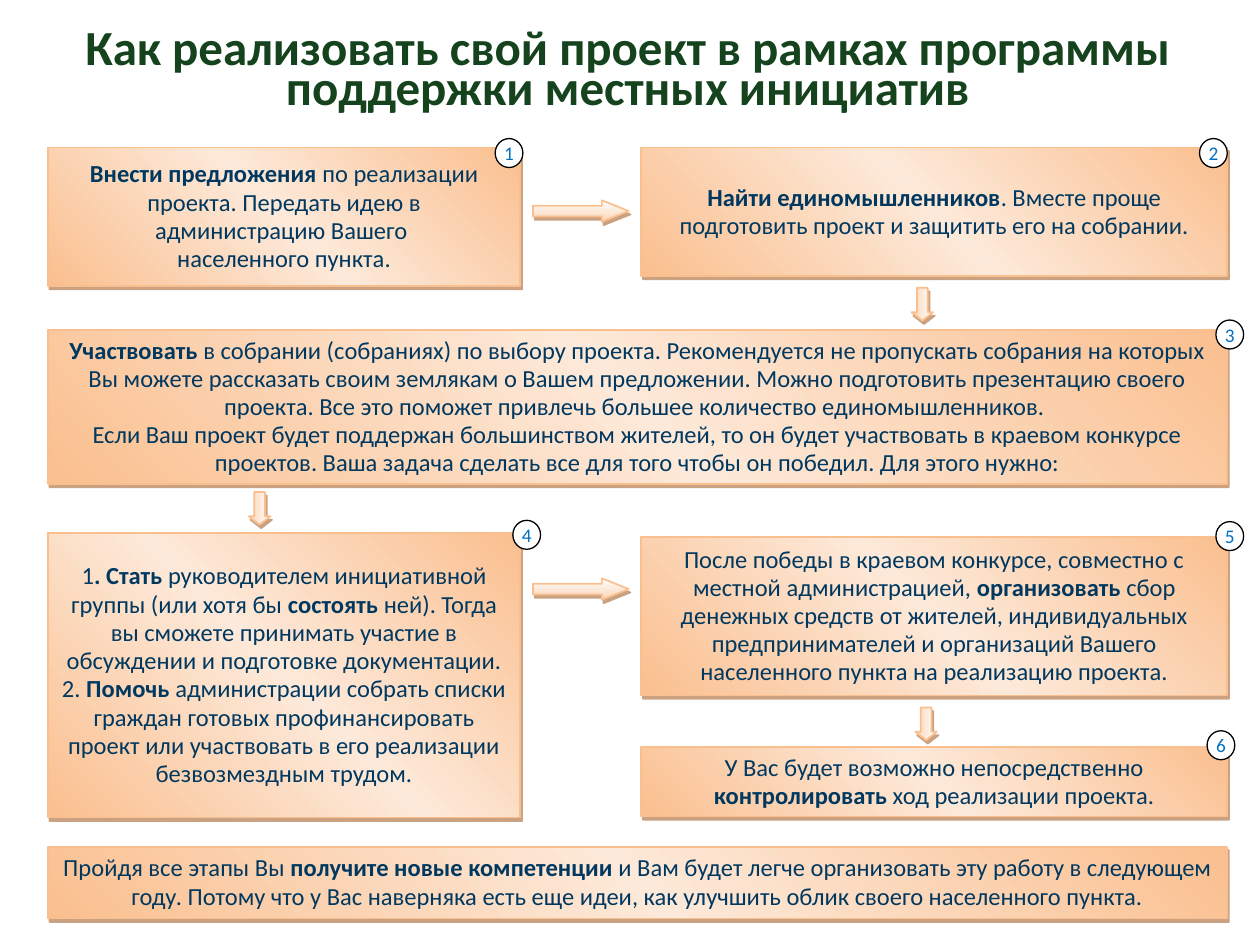
from pptx import Presentation
from pptx.dml.color import RGBColor
from pptx.enum.shapes import MSO_SHAPE
from pptx.enum.text import MSO_ANCHOR, PP_ALIGN
from pptx.oxml import parse_xml
from pptx.oxml.ns import nsdecls, qn
from pptx.util import Inches, Pt


def write(frame, lines, size, color, space=None):
    """Fill a frame with centred paragraphs; text between asterisks is bold."""
    frame.word_wrap = True
    for i, line in enumerate(lines):
        para = frame.paragraphs[0] if i == 0 else frame.add_paragraph()
        para.alignment = PP_ALIGN.CENTER
        if space:
            para.line_spacing = space
        for j, part in enumerate(line.split("*")):
            if part:
                run = para.add_run()
                run.text = part
                run.font.name = "Calibri"
                run.font.size = Pt(size)
                run.font.bold = j % 2 == 1
                run.font.color.rgb = RGBColor.from_string(color)


def add_block(kind, place, stops, angle):
    """Add a shape with a gradient, an orange line and a soft brown shadow."""
    shape = slide.shapes.add_shape(kind, *map(Inches, place))
    shape.fill.gradient()
    shape.line.color.rgb = RGBColor.from_string("FABF8F")
    shape.line.width = Pt(1)
    shape.shadow.inherit = False
    step = 100000 // (len(stops) - 1)
    marks = "".join(
        f'<a:gs pos="{i * step}"><a:srgbClr val="{color}"/></a:gs>'
        for i, color in enumerate(stops))
    props = shape._element.spPr
    props.replace(props.find(qn("a:gradFill")), parse_xml(
        f'<a:gradFill {nsdecls("a")} rotWithShape="1"><a:gsLst>{marks}</a:gsLst>'
        f'<a:lin ang="{angle * 60000}" scaled="1"/></a:gradFill>'))
    props.find(qn("a:effectLst")).append(parse_xml(
        f'<a:outerShdw {nsdecls("a")} dist="{Pt(2.2)}" dir="{63 * 60000}" '
        'algn="ctr" rotWithShape="0"><a:srgbClr val="974706">'
        '<a:alpha val="50000"/></a:srgbClr></a:outerShdw>'))
    return shape


deck = Presentation()
deck.slide_width, deck.slide_height = Inches(10), Inches(7.5)
slide = deck.slides.add_slide(deck.slide_layouts[6])

title = slide.shapes.add_textbox(
    Inches(0.39), Inches(0.23), Inches(9.18), Inches(0.75))
write(title.text_frame,
      ["*Как реализовать свой проект в рамках программы поддержки местных инициатив*"],
      28, "15431D", Pt(23))

left, right = 0.38, 5.09
narrow, half, full = 3.75, 4.65, 9.36
boxes = [
    (left, 1.17, narrow, 1.1, [
        "*Внести предложения *по реализации проекта. Передать идею в "
        "администрацию Вашего ",
        "населенного пункта."]),
    (right, 1.17, half, 1.02, [
        "*Найти единомышленников*. Вместе проще подготовить проект и защитить "
        "его на собрании."]),
    (left, 2.62, full, 1.22, [
        "*Участвовать *в собрании (собраниях) по выбору проекта. Рекомендуется "
        "не пропускать собрания на которых Вы можете рассказать своим землякам "
        "о Вашем предложении. Можно подготовить презентацию своего проекта. Все "
        "это поможет привлечь большее количество единомышленников. ",
        "Если Ваш проект будет поддержан большинством жителей, то он будет "
        "участвовать в краевом конкурсе проектов. Ваша задача сделать все для "
        "того чтобы он победил. Для этого нужно:"]),
    (left, 4.23, narrow, 2.26, [
        "1*. Стать *руководителем инициативной группы (или хотя бы *состоять "
        "*ней). Тогда вы сможете принимать участие в обсуждении и подготовке "
        "документации.",
        "2. *Помочь* администрации собрать списки граждан готовых "
        "профинансировать проект или участвовать в его реализации "
        "безвозмездным трудом."]),
    (right, 4.26, half, 1.26, [
        "После победы в краевом конкурсе, совместно с местной администрацией, "
        "*организовать *сбор денежных средств от жителей, индивидуальных "
        "предпринимателей и организаций Вашего населенного пункта на "
        "реализацию проекта."]),
    (right, 5.93, half, 0.55, [
        "У Вас будет возможно непосредственно *контролировать* ход реализации "
        "проекта."]),
    (left, 6.72, full, 0.57, [
        "Пройдя все этапы Вы *получите новые компетенции *и Вам будет легче "
        "организовать эту работу в следующем году. Потому что у Вас наверняка "
        "есть еще идеи, как улучшить облик своего населенного пункта."]),
]
for *place, lines in boxes:
    box = add_block(MSO_SHAPE.RECTANGLE, place, ["FABF8F", "FDE9D9", "FABF8F"], 315)
    box.text_frame.vertical_anchor = MSO_ANCHOR.MIDDLE
    write(box.text_frame, lines, 14, "003860", 0.96)

arrows = [
    (4.23, 1.59, 0.76, 1.25, 0),
    (7.19, 2.33, 0.26, 0.39, 90),
    (1.93, 3.95, 0.26, 0.39, 90),
    (4.23, 4.59, 0.76, 1.25, 0),
    (7.22, 5.66, 0.26, 0.39, 90),
]
for x, y, width, head, turn in arrows:
    arrow = add_block(MSO_SHAPE.RIGHT_ARROW, (x, y, width, 0.17),
                      ["FFFFFF", "FBD4B4"], 90)
    arrow.adjustments[0] = 0.5
    arrow.adjustments[1] = head
    arrow.rotation = turn

badges = [(3.93, 1.1), (9.52, 1.1), (9.65, 2.54),
          (4.07, 4.13), (9.65, 4.14), (9.58, 5.8)]
for number, (x, y) in enumerate(badges, 1):
    badge = slide.shapes.add_shape(MSO_SHAPE.FLOWCHART_CONNECTOR, Inches(x),
                                   Inches(y), Inches(0.22), Inches(0.23))
    badge.shadow.inherit = False
    badge.fill.solid()
    badge.fill.fore_color.rgb = RGBColor.from_string("FFFFFF")
    badge.line.color.rgb = RGBColor.from_string("000000")
    badge.line.width = Pt(0.75)
    frame = badge.text_frame
    frame.margin_left = frame.margin_right = 0
    frame.margin_top = frame.margin_bottom = 0
    frame.vertical_anchor = MSO_ANCHOR.MIDDLE
    write(frame, [str(number)], 11, "0070C0")

deck.save("out.pptx")
